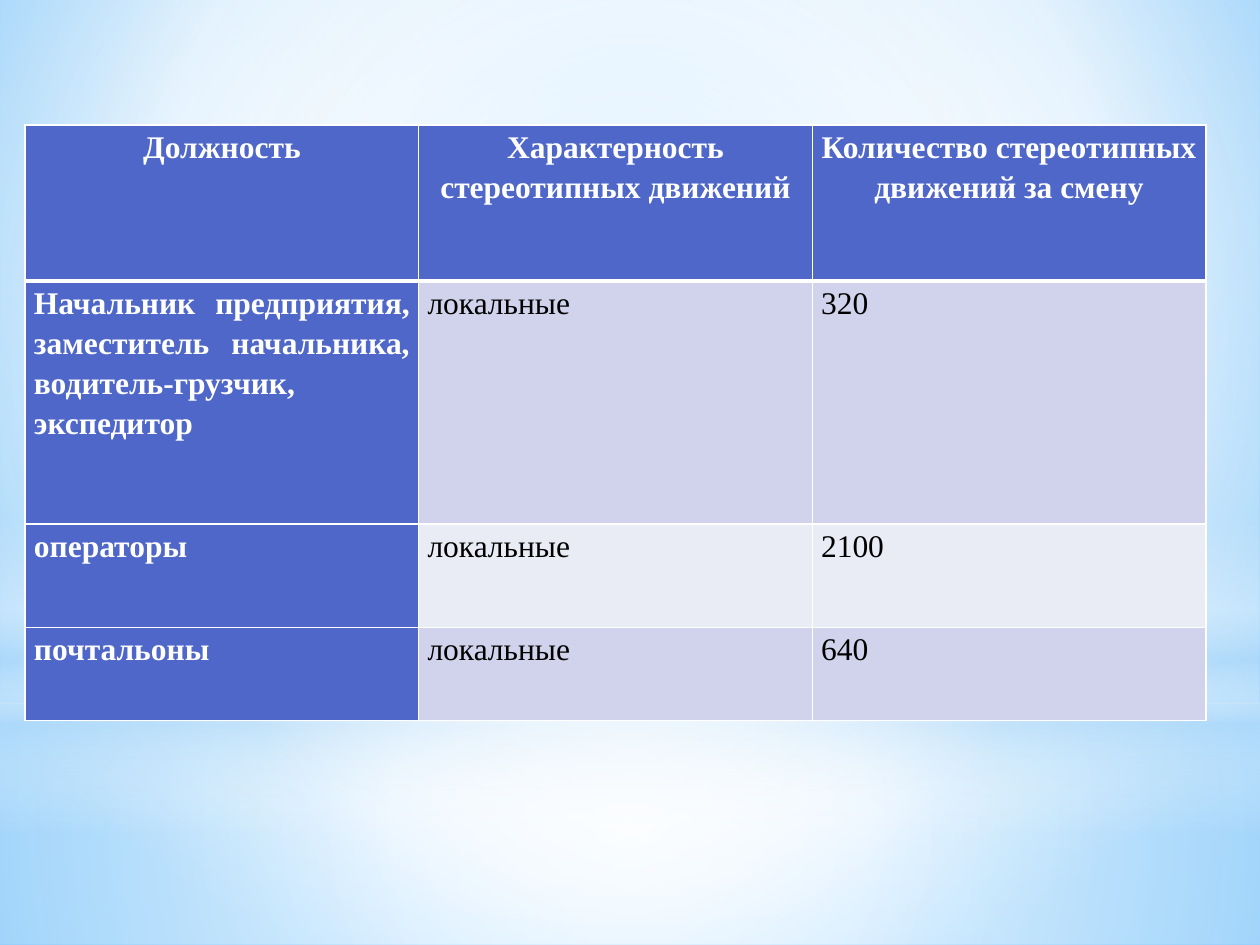
from lxml import etree
from pptx import Presentation
from pptx.dml.color import RGBColor
from pptx.enum.shapes import MSO_SHAPE
from pptx.enum.text import PP_ALIGN
from pptx.oxml.ns import qn
from pptx.util import Inches, Pt

WHITE = RGBColor(0xFF, 0xFF, 0xFF)
BLACK = RGBColor(0x00, 0x00, 0x00)
INDIGO = RGBColor(0x4E, 0x67, 0xC8)
LILAC = RGBColor(0xD0, 0xD3, 0xEB)
PALE = RGBColor(0xE9, 0xEB, 0xF5)
SKY = RGBColor(0x9E, 0xD5, 0xFF)
AZURE = RGBColor(0x5B, 0xB9, 0xFF)
MIST = RGBColor(0xB4, 0xDC, 0xFA)

CENTER = (50, 50, 50, 50)
ROWS = [
    ("Должность", "Характерность стереотипных движений",
     "Количество стереотипных движений за смену"),
    ("Начальник предприятия, заместитель начальника, водитель-грузчик, экспедитор",
     "локальные", "320"),
    ("операторы", "локальные", "2100"),
    ("почтальоны", "локальные", "640"),
]
HEIGHTS = (1.24, 1.93, 0.82, 0.74)


def add(parent, tag, **attrs):
    node = etree.SubElement(parent, qn(tag))
    for key, value in attrs.items():
        node.set(key, str(value))
    return node


def blend(fill, owner, stops, focus=None):
    """Fill with (position, colour, opacity) stops: radial at focus, else downward."""
    fill.gradient()
    grad = next(owner.iter(qn("a:gradFill")))
    for child in list(grad):
        grad.remove(child)
    group = add(grad, "a:gsLst")
    for place, color, alpha in stops:
        stop = add(group, "a:gs", pos=place * 1000)
        tint = add(stop, "a:srgbClr", val=color)
        if alpha < 100:
            add(tint, "a:alpha", val=alpha * 1000)
    if focus:
        path = add(grad, "a:path", path="circle")
        sides = {side: part * 1000 for side, part in zip("ltrb", focus)}
        add(path, "a:fillToRect", **sides)
    else:
        add(grad, "a:lin", ang=90 * 60000, scaled=0)


def add_glow(slide, kind, top, height, stops, focus=None):
    shape = slide.shapes.add_shape(kind, 0, Inches(top), Inches(10), Inches(height))
    shape.shadow.inherit = False
    shape.line.fill.background()
    blend(shape.fill, shape.element, stops, focus)


def add_backdrop(slide):
    blend(slide.background.fill, slide.element,
          [(0, SKY, 100), (60, WHITE, 100), (100, AZURE, 100)], (20, 10, 20, 60))
    rect, oval = MSO_SHAPE.RECTANGLE, MSO_SHAPE.OVAL
    add_glow(slide, rect, 5.58, 1.92,
             [(0, WHITE, 91), (37, WHITE, 76), (100, MIST, 79)], CENTER)
    add_glow(slide, rect, 0, 5.58,
             [(0, WHITE, 89), (48, WHITE, 62), (100, MIST, 79)], CENTER)
    add_glow(slide, rect, 4.12, 2.5,
             [(0, WHITE, 0), (29, WHITE, 30), (45, MIST, 40),
              (55, WHITE, 26), (65, MIST, 60), (100, WHITE, 0)])
    add_glow(slide, oval, 1.75, 5.58, [(0, WHITE, 100), (56, WHITE, 0)], CENTER)


def set_borders(cell, top, bottom):
    props = cell._tc.get_or_add_tcPr()
    widths = {"a:lnL": 1, "a:lnR": 1, "a:lnT": top, "a:lnB": bottom}
    for spot, (tag, width) in enumerate(widths.items()):
        line = add(props, tag, w=Pt(width))
        add(add(line, "a:solidFill"), "a:srgbClr", val=WHITE)
        props.insert(spot, line)


def style_cell(cell, text, row, col):
    head = row == 0
    strong = head or col == 0
    cell.margin_left = cell.margin_right = Inches(0.07)
    cell.margin_top = cell.margin_bottom = 0
    cell.fill.solid()
    cell.fill.fore_color.rgb = INDIGO if strong else LILAC if row % 2 else PALE
    set_borders(cell, 3 if row == 1 else 1, 3 if head else 1)
    cell.text = text
    para = cell.text_frame.paragraphs[0]
    para.alignment = PP_ALIGN.CENTER if head else PP_ALIGN.JUSTIFY
    para.line_spacing = 1.15
    para.font.name = "Times New Roman"
    para.font.size = Pt(18)
    para.font.bold = strong
    para.font.color.rgb = WHITE if strong else BLACK


def add_grid(slide, left, top, width):
    count = len(ROWS[0])
    frame = slide.shapes.add_table(len(ROWS), count, Inches(left), Inches(top),
                                   Inches(width), Inches(sum(HEIGHTS)))
    table = frame.table
    for column in table.columns:
        column.width = Inches(width / count)
    for row, (texts, height) in enumerate(zip(ROWS, HEIGHTS)):
        table.rows[row].height = Inches(height)
        for col, text in enumerate(texts):
            style_cell(table.cell(row, col), text, row, col)


def main():
    deck = Presentation()
    deck.slide_width, deck.slide_height = Inches(10), Inches(7.5)
    slide = deck.slides.add_slide(deck.slide_layouts[6])
    add_backdrop(slide)
    add_grid(slide, 0.2, 0.99, 9.37)
    deck.save("out.pptx")


if __name__ == "__main__":
    main()
